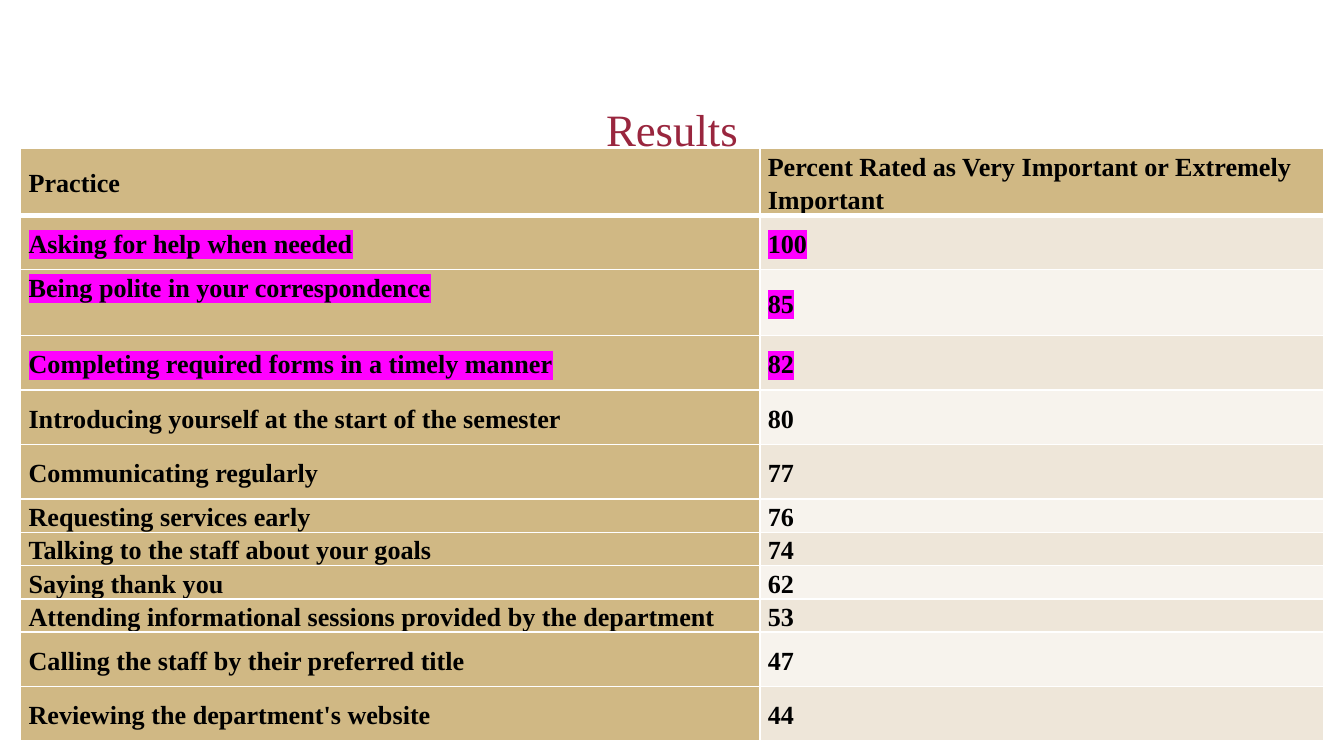
from dataclasses import dataclass

from lxml.etree import SubElement
from pptx import Presentation
from pptx.dml.color import RGBColor
from pptx.enum.text import MSO_ANCHOR, PP_ALIGN
from pptx.oxml.ns import qn
from pptx.util import Cm, Pt


@dataclass(frozen=True)
class Theme:
    """Colours, font and sizes of the slide."""

    font: str = "Times New Roman"
    title_size: int = 24
    table_size: int = 14
    title: str = "99263E"
    text: str = "000000"
    tan: str = "D0B884"
    bands: tuple = ("EEE6D9", "F7F3ED")
    border: str = "FFFFFF"
    highlight: str = "FF00FF"


THEME = Theme()
SINGLE, TALL, DOUBLE = 0.62, 1.03, 1.25
HEADER = ("Practice", "Percent Rated as Very Important or Extremely Important")
PRACTICES = [
    ("Asking for help when needed", 100, TALL),
    ("Being polite in your correspondence", 85, DOUBLE),
    ("Completing required forms in a timely manner", 82, TALL),
    ("Introducing yourself at the start of the semester", 80, TALL),
    ("Communicating regularly", 77, TALL),
    ("Requesting services early", 76, SINGLE),
    ("Talking to the staff about your goals", 74, SINGLE),
    ("Saying thank you", 62, SINGLE),
    ("Attending informational sessions provided by the department", 53, SINGLE),
    ("Calling the staff by their preferred title", 47, TALL),
    ("Reviewing the department's website", 44, TALL),
]
HIGHLIGHT_ABOVE = 80


def style_font(font, size, colour, bold=False):
    """Apply the theme font with a size, colour and weight."""
    font.name = THEME.font
    font.size = Pt(size)
    font.bold = bold
    font.color.rgb = RGBColor.from_string(colour)


def add_colour(parent, colour):
    """Append an RGB colour element."""
    SubElement(parent, qn("a:srgbClr")).set("val", colour)


def highlight_run(run):
    """Mark a run with the highlight colour."""
    properties = run._r.get_or_add_rPr()
    highlight = SubElement(properties, qn("a:highlight"))
    add_colour(highlight, THEME.highlight)
    properties.find(qn("a:solidFill")).addnext(highlight)


def add_borders(cell, bottom_width):
    """Draw the four borders of a cell, before its fill is set."""
    properties = cell._tc.get_or_add_tcPr()
    for side, width in (("L", 1), ("R", 1), ("T", 1), ("B", bottom_width)):
        line = SubElement(properties, qn(f"a:ln{side}"), w=str(Pt(width)))
        add_colour(SubElement(line, qn("a:solidFill")), THEME.border)


def fill_cell(cell, text, colour, highlighted=False, bottom_width=1):
    """Write and format one table cell."""
    add_borders(cell, bottom_width)
    cell.fill.solid()
    cell.fill.fore_color.rgb = RGBColor.from_string(colour)
    cell.margin_left = cell.margin_right = Cm(0.15)
    cell.margin_top = cell.margin_bottom = Cm(0)
    cell.vertical_anchor = MSO_ANCHOR.MIDDLE
    cell.text_frame.text = text
    paragraph = cell.text_frame.paragraphs[0]
    paragraph.line_spacing = 1.15
    for run in paragraph.runs:
        style_font(run.font, THEME.table_size, THEME.text, bold=True)
        if highlighted:
            highlight_run(run)


def add_title(slide, text):
    """Place and format the slide title."""
    title = slide.shapes.title
    title.left, title.top, title.width, title.height = Cm(1.27), Cm(1.42), Cm(22.86), Cm(2.03)
    title.text_frame.text = text
    title.text_frame.vertical_anchor = MSO_ANCHOR.MIDDLE
    paragraph = title.text_frame.paragraphs[0]
    paragraph.alignment = PP_ALIGN.CENTER
    style_font(paragraph.runs[0].font, THEME.title_size, THEME.title)


def add_results_table(slide):
    """Add the table of practices and their ratings."""
    heights = [DOUBLE] + [height for _, _, height in PRACTICES]
    frame = slide.shapes.add_table(
        len(heights), 2, Cm(0.39), Cm(2.81), Cm(24.62), Cm(sum(heights))
    )
    table = frame.table
    for column, width in zip(table.columns, (13.97, 10.65)):
        column.width = Cm(width)
    for row, height in zip(table.rows, heights):
        row.height = Cm(height)
    for column, text in enumerate(HEADER):
        fill_cell(table.cell(0, column), text, THEME.tan, bottom_width=3)
    for index, (practice, percent, height) in enumerate(PRACTICES):
        highlighted = percent > HIGHLIGHT_ABOVE
        practice_cell = table.cell(index + 1, 0)
        fill_cell(practice_cell, practice, THEME.tan, highlighted)
        fill_cell(table.cell(index + 1, 1), str(percent), THEME.bands[index % 2], highlighted)
        if height == DOUBLE:
            practice_cell.vertical_anchor = MSO_ANCHOR.TOP


def main():
    """Build and save the presentation."""
    presentation = Presentation()
    presentation.slide_width, presentation.slide_height = Cm(25.4), Cm(14.29)
    slide = presentation.slides.add_slide(presentation.slide_layouts[5])
    add_title(slide, "Results")
    add_results_table(slide)
    presentation.save("out.pptx")


if __name__ == "__main__":
    main()
